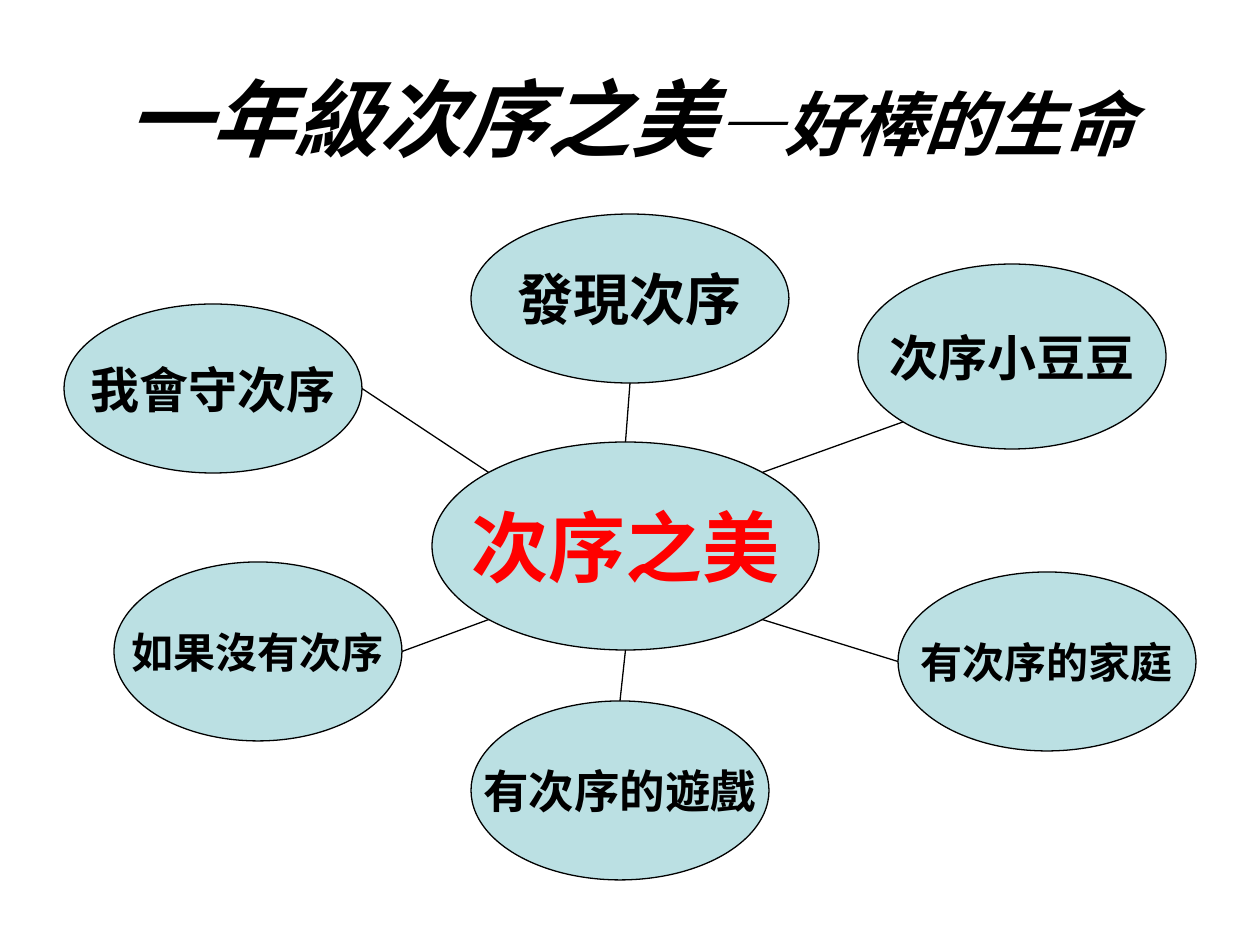
from dataclasses import dataclass
from math import cos, radians, sin

from lxml import etree
from pptx import Presentation
from pptx import util as u
from pptx.dml.color import RGBColor
from pptx.enum import shapes, text
from pptx.oxml.ns import qn


@dataclass(frozen=True)
class Theme:
    font: str = "Arial"
    ink: RGBColor = RGBColor(0, 0, 0)
    accent: RGBColor = RGBColor(0xFF, 0, 0)
    bubble: RGBColor = RGBColor(0xBB, 0xE0, 0xE3)
    title: int = 48
    subtitle: int = 40
    hub: int = 44
    large: int = 32
    medium: int = 28
    game: int = 26
    small: int = 24
    line: float = 0.75


theme = Theme()
PX = 914400 / 126


def style(r, size, color):
    r.font.name = theme.font
    r.font.size = u.Pt(size)
    r.font.bold = True
    r.font.color.rgb = color


def rim(sp, angle):
    x = sp.left + sp.width / 2 * (1 + cos(radians(angle)))
    y = sp.top + sp.height / 2 * (1 + sin(radians(angle)))
    return round(x), round(y)


prs = Presentation()
prs.slide_width = round(1260 * PX)
prs.slide_height = round(945 * PX)
s = prs.slides.add_slide(prs.slide_layouts[5])

title = s.shapes.title
title.left, title.top, title.width, title.height = [round(v * PX) for v in (63, 38, 1134, 157)]
tf = title.text_frame
tf.auto_size = text.MSO_AUTO_SIZE.NONE
tf.vertical_anchor = text.MSO_ANCHOR.MIDDLE
p = tf.paragraphs[0]
p.alignment = text.PP_ALIGN.CENTER
for words, size in (("一年級次序之美", theme.title), ("—好棒的生命", theme.subtitle)):
    r = p.add_run()
    r.text = words
    style(r, size, theme.ink)
    r.font.italic = True

bubbles = [
    ("次序之美", (432, 442, 387, 208), theme.hub, theme.accent),
    ("發現次序", (471, 214, 318, 169), theme.large, theme.ink),
    ("次序小豆豆", (858, 264, 308, 185), theme.medium, theme.ink),
    ("我會守次序", (64, 304, 298, 169), theme.medium, theme.ink),
    ("有次序的遊戲", (471, 701, 298, 179), theme.game, theme.ink),
    ("如果沒有次序", (114, 562, 288, 179), theme.small, theme.ink),
    ("有次序的家庭", (898, 572, 298, 179), theme.small, theme.ink),
]
ovals = {}
for words, box, size, color in bubbles:
    sp = s.shapes.add_shape(shapes.MSO_SHAPE.OVAL, *[round(v * PX) for v in box])
    sp.shadow.inherit = False
    sp.fill.solid()
    sp.fill.fore_color.rgb = theme.bubble
    sp.line.color.rgb = theme.ink
    sp.line.width = u.Pt(theme.line)
    tf = sp.text_frame
    tf.text = words
    tf.word_wrap = False
    tf.vertical_anchor = text.MSO_ANCHOR.MIDDLE
    p = tf.paragraphs[0]
    p.alignment = text.PP_ALIGN.CENTER
    style(p.runs[0], size, color)
    ovals[words] = sp

spokes = [
    ("次序小豆豆", -45, 135),
    ("有次序的家庭", 45, 180),
    ("我會守次序", -135, 0),
    ("如果沒有次序", 135, 0),
    ("有次序的遊戲", 90, -90),
    ("發現次序", -90, 90),
]
for words, hub_angle, topic_angle in spokes:
    start = rim(ovals["次序之美"], hub_angle)
    end = rim(ovals[words], topic_angle)
    spoke = s.shapes.add_connector(shapes.MSO_CONNECTOR.STRAIGHT, *start, *end)
    spoke.line.color.rgb = theme.ink
    spoke.line.width = u.Pt(theme.line)
    etree.SubElement(spoke._element.spPr, qn("a:effectLst"))

prs.save("out.pptx")
